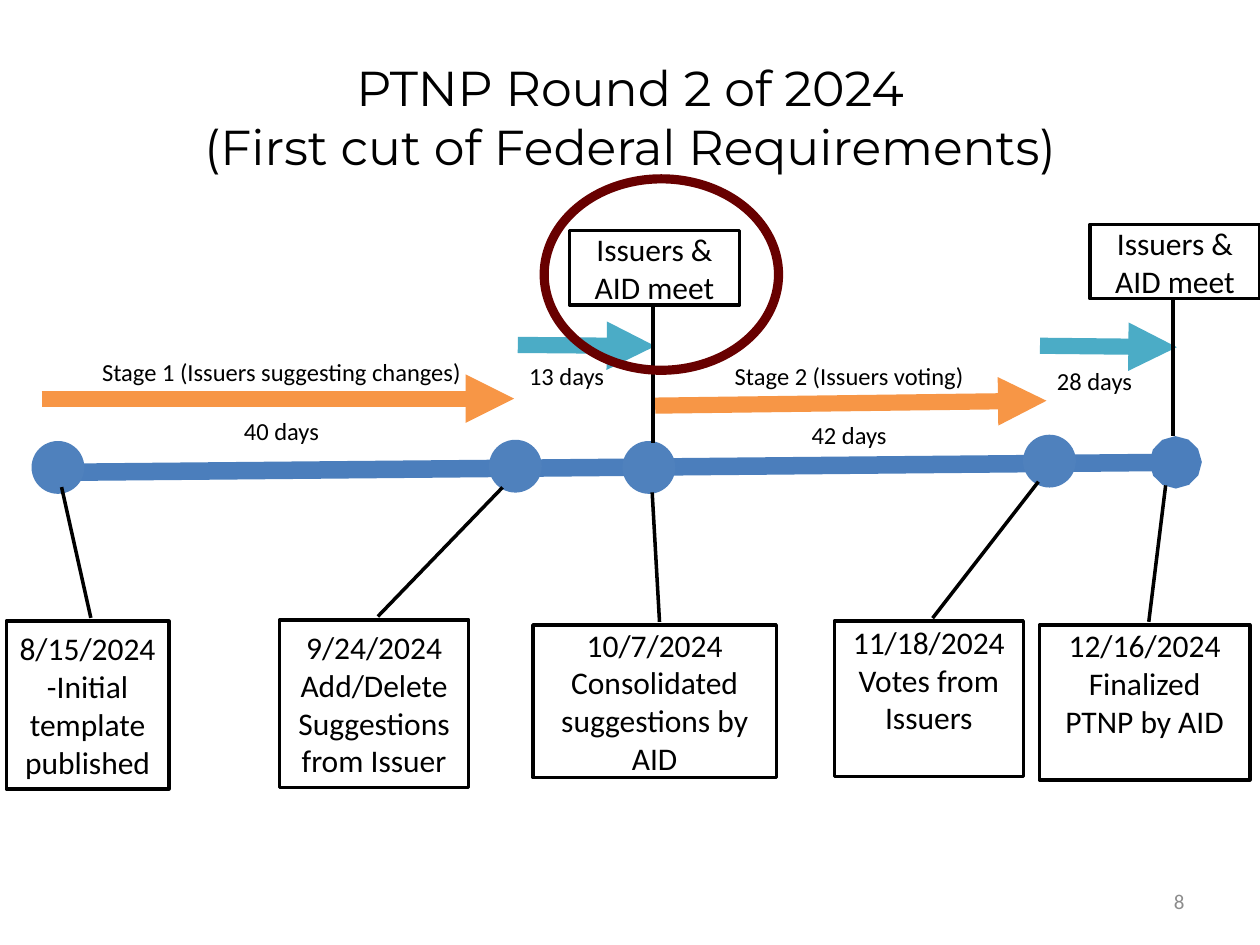
from dataclasses import dataclass

import pptx
import pptx.dml.color
import pptx.enum.shapes
import pptx.enum.text
import pptx.oxml.ns
import pptx.util
from lxml import etree

Pt = pptx.util.Pt
Shape = pptx.enum.shapes.MSO_SHAPE
Align = pptx.enum.text.PP_ALIGN
Anchor = pptx.enum.text.MSO_ANCHOR
qn = pptx.oxml.ns.qn


@dataclass(frozen=True)
class Theme:
    ink: str = "000000"
    paper: str = "FFFFFF"
    muted: str = "8C8C8C"
    axis: str = "4B7EBC"
    node: str = "4F81BD"
    stage: str = "F79646"
    gap: str = "4BACC6"
    ring: str = "680000"
    heading_font: str = "Montserrat"
    body_font: str = "Calibri"
    heading: float = 28
    callout: float = 18
    label: float = 14
    footer: float = 12


THEME = Theme()


@dataclass(frozen=True)
class Rect:
    left: float
    top: float
    width: float
    height: float

    def points(self) -> list:
        return [Pt(v) for v in (self.left, self.top, self.width, self.height)]


@dataclass(frozen=True)
class Callout:
    rect: Rect
    lines: tuple
    leader: tuple  # start y, start x, end y, end x as shares of the box
    bottom_inset: float = 3.6


@dataclass(frozen=True)
class Stroke:
    start: tuple
    end: tuple
    color: str
    width: float
    tail: str


@dataclass(frozen=True)
class Label:
    rect: Rect
    lines: tuple
    align: Align = Align.CENTER
    gap: float = 0


def rgb(value: str) -> pptx.dml.color.RGBColor:
    return pptx.dml.color.RGBColor.from_string(value)


def write(frame, lines: tuple, size: float, font: str = THEME.body_font,
          color: str = THEME.ink, align: Align = Align.CENTER,
          anchor: Anchor = Anchor.MIDDLE, gap: float = 0) -> None:
    """Fill a text frame, one paragraph for each line; gap separates them."""
    frame.word_wrap = True
    frame.vertical_anchor = anchor
    span_format = {"name": font, "size": Pt(size)}
    for index, line in enumerate(lines):
        para = frame.add_paragraph() if index else frame.paragraphs[0]
        para.text = line
        para.alignment = align
        if index and gap:
            para.space_before = Pt(gap)
        for span in para.runs:
            for key, value in span_format.items():
                setattr(span.font, key, value)
            span.font.color.rgb = rgb(color)


def add_text(page, rect: Rect, lines: tuple, size: float, **options) -> None:
    box = page.shapes.add_textbox(*rect.points())
    write(box.text_frame, lines, size, **options)


def add_figure(page, kind: Shape, rect: Rect, fill: str = "", line: str = "",
               width: float = 0):
    figure = page.shapes.add_shape(kind, *rect.points())
    figure.shadow.inherit = False
    if fill:
        figure.fill.solid()
        figure.fill.fore_color.rgb = rgb(fill)
    else:
        figure.fill.background()
    if line:
        figure.line.color.rgb = rgb(line)
        figure.line.width = Pt(width)
    else:
        figure.line.fill.background()
    return figure


def add_stroke(page, stroke: Stroke) -> None:
    ends = [Pt(v) for v in stroke.start + stroke.end]
    line = page.shapes.add_connector(pptx.enum.shapes.MSO_CONNECTOR.STRAIGHT, *ends)
    line.line.color.rgb = rgb(stroke.color)
    line.line.width = Pt(stroke.width)
    etree.SubElement(line.line._get_or_add_ln(), qn("a:tailEnd"), type=stroke.tail)
    etree.SubElement(line._element.spPr, qn("a:effectLst"))


def add_callout(page, callout: Callout) -> None:
    box = add_figure(page, Shape.LINE_CALLOUT_1, callout.rect, THEME.paper, THEME.ink, 2)
    for index, share in enumerate(callout.leader):
        box.adjustments[index] = share
    box.text_frame.margin_bottom = Pt(callout.bottom_inset)
    write(box.text_frame, callout.lines, THEME.callout)


def below(y: float, x: float) -> tuple:
    """Leader from the top edge of a box up to its timeline node."""
    return (-0.02, 0.52, y, x)


AXIS = Stroke((23.8, 270), (671.8, 264.2), THEME.axis, 10, "oval")
NODE_SIZE = 30.2
NODES = [(355.7, 252), (279.4, 251.3), (584.6, 248.4), (18, 252)]

ARROWS = [
    Stroke((23.8, 227.8), (293.8, 227.8), THEME.stage, 9.25, "triangle"),
    Stroke((374.4, 231.8), (598, 229), THEME.stage, 9.25, "triangle"),
    Stroke((295.9, 197.1), (374.4, 197.8), THEME.gap, 9.25, "triangle"),
    Stroke((594.3, 197.6), (672.5, 198.4), THEME.gap, 9.25, "triangle"),
]

LABELS = [
    Label(Rect(44.6, 200.2, 232.6, 58.3),
          ("Stage 1 (Issuers suggesting changes)", "40 days"), gap=17),
    Label(Rect(385.9, 202.5, 198.7, 58.3), ("Stage 2 (Issuers voting)", "42 days"), gap=17),
    Label(Rect(295.2, 202.5, 73.4, 24.5), ("13 days",), Align.LEFT),
    Label(Rect(596.9, 205.4, 73.4, 24.5), ("28 days",), Align.LEFT),
]

# A deep bottom inset lifts the text of the boxes that have room to spare.
LIFTED = 25.6
ABOVE = (1.01, 0.49, 2.85, 0.49)
MEETING = ("Issuers & AID meet",)
CALLOUTS = [
    Callout(Rect(594, 357.1, 120.2, 88.6), ("12/16/2024", "Finalized PTNP by AID"),
            below(-0.9, 0.6), LIFTED),
    Callout(Rect(476.8, 355, 108, 88.6), ("11/18/2024 Votes from Issuers",),
            below(-0.9, 1.08), LIFTED),
    Callout(Rect(304.6, 357.1, 139, 87.1), ("10/7/2024", "Consolidated suggestions by AID"),
            below(-0.87, 0.49)),
    Callout(Rect(3.6, 355, 92.9, 95.8), ("8/15/2024-Initial template published",),
            below(-0.8, 0.34)),
    Callout(Rect(159.8, 354.2, 108, 95.8), ("9/24/2024", "Add/Delete Suggestions from Issuer"),
            below(-0.79, 1.18)),
    Callout(Rect(622.8, 128.2, 97.2, 42.5), MEETING, ABOVE),
    Callout(Rect(325.4, 131.8, 97.2, 42.5), MEETING, ABOVE),
]


def main() -> None:
    deck = pptx.Presentation()
    deck.slide_width, deck.slide_height = Pt(720), Pt(540)
    page = deck.slides.add_slide(deck.slide_layouts[6])

    # Heading and page number
    add_text(page, Rect(36, 21.6, 648, 90),
             ("PTNP Round 2 of 2024", "(First cut of Federal Requirements)"),
             THEME.heading, font=THEME.heading_font)
    add_text(page, Rect(516.2, 500.4, 167.8, 28.8), ("8",), THEME.footer,
             color=THEME.muted, align=Align.RIGHT)

    # Timeline
    add_stroke(page, AXIS)
    for left, top in NODES:
        add_figure(page, Shape.FLOWCHART_CONNECTOR,
                   Rect(left, top, NODE_SIZE, NODE_SIZE), THEME.node)

    # Stages and waiting periods
    for arrow in ARROWS:
        add_stroke(page, arrow)
    for label in LABELS:
        add_text(page, label.rect, label.lines, THEME.label, align=label.align,
                 anchor=Anchor.TOP, gap=label.gap)

    # Milestones, with a ring round the first meeting
    for callout in CALLOUTS:
        add_callout(page, callout)
    add_figure(page, Shape.OVAL, Rect(311, 102.2, 133.9, 109.4),
               line=THEME.ring, width=5.25)

    deck.save("out.pptx")


if __name__ == "__main__":
    main()
